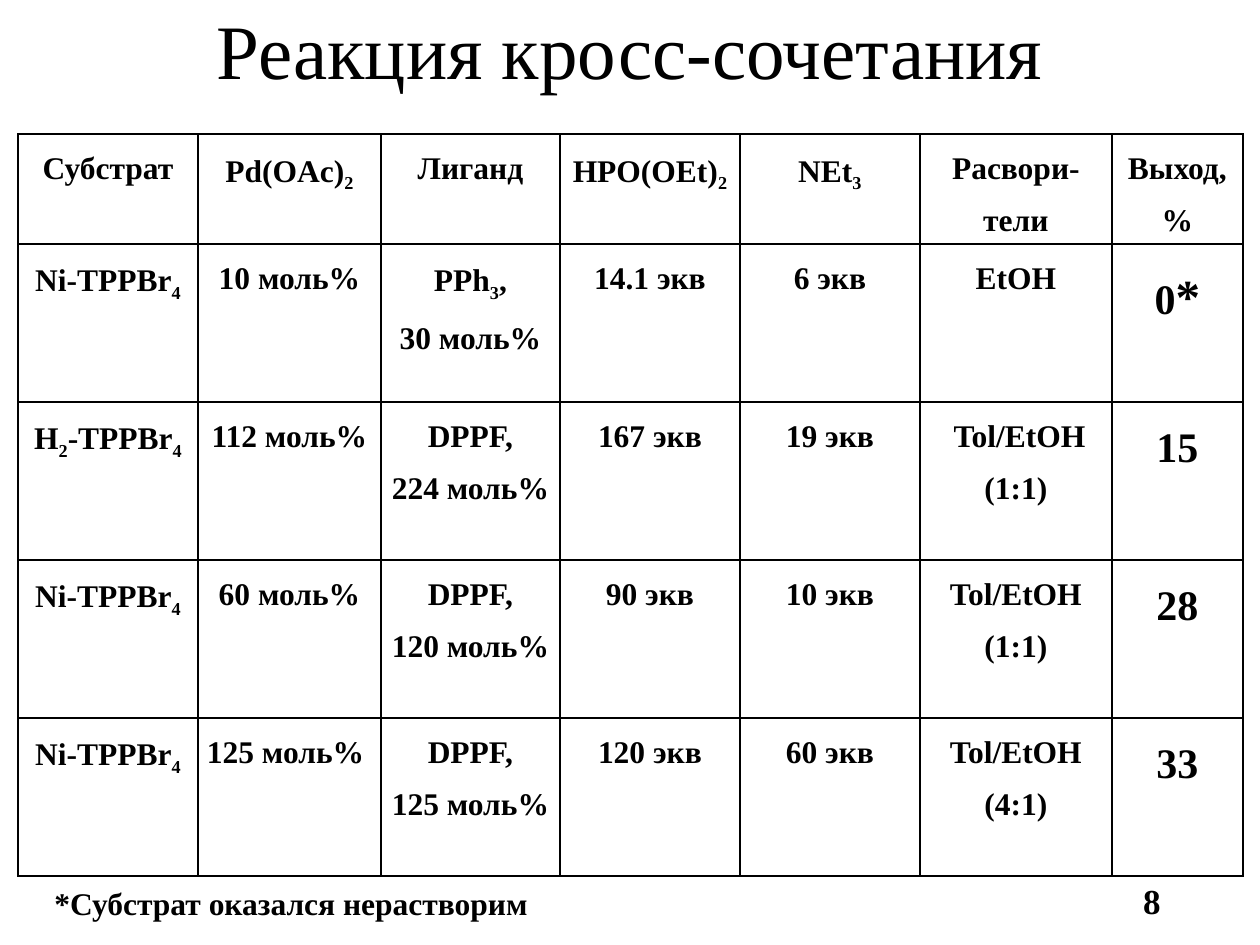
from dataclasses import dataclass
from typing import NamedTuple

from lxml.etree import SubElement
from pptx import Presentation
from pptx.dml.color import RGBColor
from pptx.enum.text import MSO_ANCHOR, MSO_AUTO_SIZE, PP_ALIGN
from pptx.oxml.ns import qn
from pptx.util import Emu, Pt


@dataclass(frozen=True)
class Theme:
    font: str = "Times New Roman"
    ink: str = "000000"
    title: int = 44
    body: int = 18
    result: int = 24
    star: int = 28
    number: int = 20
    border: int = 1


class Box(NamedTuple):
    left: int
    top: int
    width: int
    height: int


class Note(NamedTuple):
    text: str
    box: Box
    size: int
    align: PP_ALIGN
    anchor: MSO_ANCHOR
    wrap: bool


THEME = Theme()
EMU_PER_PX = 914400 / 126
COLUMN_WIDTHS = [180, 183, 179, 180, 180, 192, 131]
HEADER_HEIGHT, ROW_HEIGHT = 110, 158
CELL_MARGIN = 6

# "_" lowers the character after it; a line break starts a new paragraph
ROWS = [
    ["Субстрат", "Pd(OAc)_2", "Лиганд", "HPO(OEt)_2", "NEt_3", "Раствори-тели".replace("Раство", "Расво"), "Выход, %"],
    ["Ni-TPPBr_4", "10 моль%", "PPh_3,\n30 моль%", "14.1 экв", "6 экв", "EtOH", "0*"],
    ["H_2-TPPBr_4", "112 моль%", "DPPF,\n224 моль%", "167 экв", "19 экв", " Tol/EtOH (1:1)", "15"],
    ["Ni-TPPBr_4", "60 моль%", "DPPF,\n120 моль%", "90 экв", "10 экв", "Tol/EtOH (1:1)", "28"],
    ["Ni-TPPBr_4", "125 моль% ", "DPPF,\n125 моль%", "120 экв", "60 экв", "Tol/EtOH (4:1)", "33"],
]
ROWS[0][5] = "Расвори-тели"

NOTES = [
    Note("8", Box(890, 876, 283, 50), THEME.number, PP_ALIGN.RIGHT, MSO_ANCHOR.MIDDLE, True),
    Note("*Субстрат оказался нерастворим", Box(42, 878, 512, 50), THEME.body,
         PP_ALIGN.LEFT, MSO_ANCHOR.TOP, False),
]


def px(length: int) -> Emu:
    return Emu(round(length * EMU_PER_PX))


def style(para, size: int, align: PP_ALIGN, bold: bool = True) -> None:
    para.alignment = align
    para.font.name = THEME.font
    para.font.size = Pt(size)
    para.font.bold = bold
    para.font.color.rgb = RGBColor.from_string(THEME.ink)


def add_span(para, text: str, lowered: bool = False) -> None:
    if not text:
        return
    span = para.add_run()
    span.text = text
    if lowered:
        span._r.get_or_add_rPr().set("baseline", "-25000")
    if text == "*":
        span.font.size = Pt(THEME.star)


def write_formula(para, text: str) -> None:
    plain, *lowered_parts = text.split("_")
    before, star, after = plain.partition("*")
    for part in (before, star, after):
        add_span(para, part)
    for part in lowered_parts:
        add_span(para, part[0], lowered=True)
        add_span(para, part[1:])


def add_borders(cell) -> None:
    properties = cell._tc.get_or_add_tcPr()
    for side in ("lnL", "lnR", "lnT", "lnB"):
        line = SubElement(properties, qn(f"a:{side}"), w=str(Pt(THEME.border)))
        fill = SubElement(line, qn("a:solidFill"))
        SubElement(fill, qn("a:srgbClr"), val=THEME.ink)


def fill_cell(cell, text: str, size: int) -> None:
    cell.margin_left = cell.margin_right = px(CELL_MARGIN)
    cell.margin_top = cell.margin_bottom = 0
    add_borders(cell)
    cell.fill.background()
    frame = cell.text_frame
    for index, line in enumerate(text.split("\n")):
        para = frame.add_paragraph() if index else frame.paragraphs[0]
        style(para, size, PP_ALIGN.CENTER)
        para.line_spacing = 1.5
        write_formula(para, line)


def add_results_table(page, left: int, top: int) -> None:
    heights = [HEADER_HEIGHT] + [ROW_HEIGHT] * (len(ROWS) - 1)
    box = Box(left, top, sum(COLUMN_WIDTHS), sum(heights))
    table = page.shapes.add_table(len(ROWS), len(COLUMN_WIDTHS), *map(px, box)).table
    table.first_row = table.horz_banding = False
    for column, width in zip(table.columns, COLUMN_WIDTHS):
        column.width = px(width)
    for row_index, (row, height) in enumerate(zip(table.rows, heights)):
        row.height = px(height)
        for column_index, text in enumerate(ROWS[row_index]):
            is_result = row_index > 0 and column_index == len(COLUMN_WIDTHS) - 1
            fill_cell(row.cells[column_index], text, THEME.result if is_result else THEME.body)


def add_title(page, text: str, box: Box) -> None:
    title = page.shapes.title
    title.left, title.top, title.width, title.height = map(px, box)
    title.text_frame.text = text
    title.text_frame.vertical_anchor = MSO_ANCHOR.MIDDLE
    para = title.text_frame.paragraphs[0]
    style(para, THEME.title, PP_ALIGN.CENTER, bold=False)
    para.line_spacing = 0.9


def add_note(page, note: Note) -> None:
    frame = page.shapes.add_textbox(*map(px, note.box)).text_frame
    frame.word_wrap = note.wrap
    frame.auto_size = MSO_AUTO_SIZE.NONE if note.wrap else MSO_AUTO_SIZE.SHAPE_TO_FIT_TEXT
    frame.vertical_anchor = note.anchor
    frame.text = note.text
    style(frame.paragraphs[0], note.size, note.align)


def main() -> None:
    deck = Presentation()
    deck.slide_width, deck.slide_height = px(1260), px(945)
    page = deck.slides.add_slide(deck.slide_layouts[5])

    # Heading
    add_title(page, "Реакция кросс-сочетания", Box(87, 0, 1086, 110))
    # Reaction conditions and yields
    add_results_table(page, left=18, top=134)
    # Page number and footnote
    for note in NOTES:
        add_note(page, note)

    deck.save("out.pptx")


if __name__ == "__main__":
    main()
